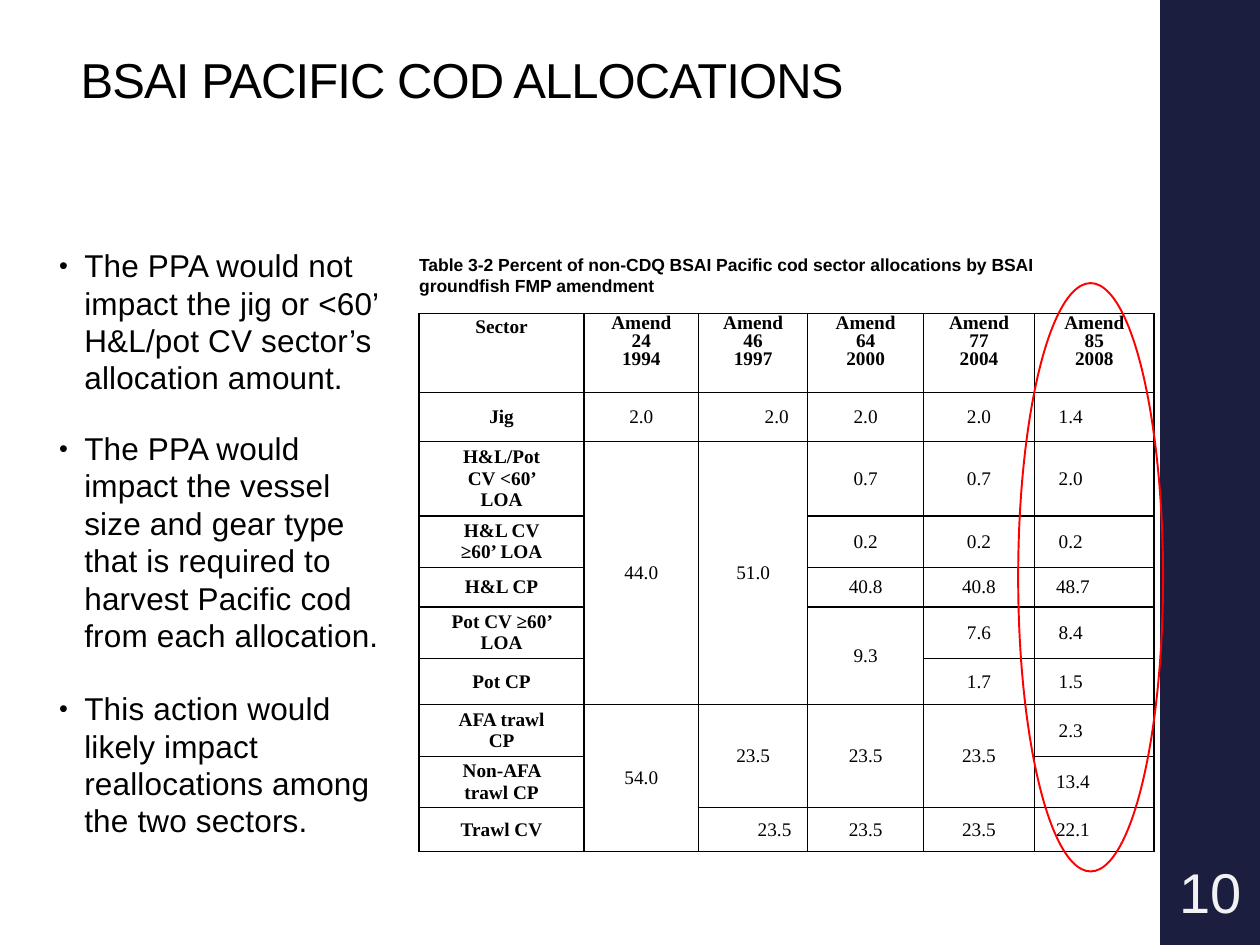
from lxml.etree import SubElement
from pptx import Presentation
from pptx.dml.color import RGBColor
from pptx.enum.shapes import MSO_SHAPE
from pptx.enum.text import MSO_ANCHOR, MSO_AUTO_SIZE, PP_ALIGN
from pptx.oxml import parse_xml
from pptx.oxml.ns import nsdecls, qn
from pptx.util import Pt

NAVY = RGBColor(0x1B, 0x1E, 0x3E)
BLACK = RGBColor(0, 0, 0)
RED = RGBColor(0xFF, 0, 0)
PALE = RGBColor(0xF2, 0xF2, 0xF2)


def apply(target, formats):
    for attribute, value in formats.items():
        setattr(target, attribute, value)


def write(paragraph, text, size, color=BLACK, bold=False, font="Arial", spacing=0):
    run = paragraph.add_run()
    run.text = text
    apply(run.font, {"size": Pt(size), "name": font, "bold": bold})
    run.font.color.rgb = color
    if spacing:
        run.font._element.set("spc", str(spacing))


prs = Presentation()
prs.slide_width, prs.slide_height = Pt(720), Pt(540)
slide = prs.slides.add_slide(prs.slide_layouts[1])
title, points = slide.placeholders

# Title
apply(title, {"left": Pt(38.9), "top": Pt(10.8), "width": Pt(643), "height": Pt(55.4)})
apply(title.text_frame, {"vertical_anchor": MSO_ANCHOR.BOTTOM,
                         "auto_size": MSO_AUTO_SIZE.NONE})
heading = title.text_frame.paragraphs[0]
apply(heading, {"alignment": PP_ALIGN.LEFT, "line_spacing": 0.9})
write(heading, "BSAI PACIFIC COD ALLOCATIONS", 28, spacing=-50)

# Bulleted points: text and space before
apply(points, {"left": Pt(26.6), "top": Pt(119.5), "width": Pt(206), "height": Pt(415.4)})
apply(points.text_frame, {"margin_top": Pt(22), "auto_size": MSO_AUTO_SIZE.NONE})
POINTS = [
    ("The PPA would not impact the jig or <60’ H&L/pot CV sector’s allocation amount.", 0),
    ("The PPA would impact the vessel size and gear type that is required to harvest "
     "Pacific cod from each allocation.", 19),
    ("This action would likely impact reallocations among the two sectors.", 20.5),
]
for number, (text, gap) in enumerate(POINTS):
    frame = points.text_frame
    point = frame.add_paragraph() if number else frame.paragraphs[0]
    apply(point, {"line_spacing": 0.99, "space_before": Pt(gap), "space_after": Pt(0)})
    properties = point._p.get_or_add_pPr()
    properties.set("marL", str(Pt(14.4)))
    properties.set("indent", str(Pt(-14.4)))
    bullet_color = SubElement(properties, qn("a:buClr"))
    SubElement(bullet_color, qn("a:srgbClr"), val=str(BLACK))
    SubElement(properties, qn("a:buSzPct"), val="80000")
    SubElement(properties, qn("a:buChar"), char="•")
    write(point, text, 18, spacing=10)

# Sidebar with page number
sidebar = slide.shapes.add_shape(MSO_SHAPE.RECTANGLE, Pt(663), 0, Pt(57), Pt(540))
sidebar.shadow.inherit = False
sidebar.fill.solid()
sidebar.fill.fore_color.rgb = NAVY
sidebar.line.fill.background()
page_number = slide.shapes.add_textbox(Pt(664.6), Pt(486), Pt(54), Pt(46.8))
apply(page_number.text_frame, {"vertical_anchor": MSO_ANCHOR.MIDDLE, "word_wrap": True,
                               "margin_left": Pt(2), "margin_right": Pt(2)})
page_number.text_frame.paragraphs[0].alignment = PP_ALIGN.CENTER
write(page_number.text_frame.paragraphs[0], "10", 32, PALE)

# Table caption
caption = slide.shapes.add_textbox(Pt(232.4), Pt(141.8), Pt(398), Pt(31.7))
caption.text_frame.word_wrap = True
write(caption.text_frame.paragraphs[0],
      "Table 3-2 Percent of non-CDQ BSAI Pacific cod sector allocations "
      "by BSAI groundfish FMP amendment", 10, bold=True)

# Allocation table; None continues the cell above
ALLOCATIONS = [
    ["Sector", "Amend 24\n1994", "Amend 46\n1997", "Amend 64\n2000", "Amend 77\n2004",
     "Amend 85\n2008"],
    ["Jig", "2.0", "2.0", "2.0", "2.0", "1.4"],
    ["H&L/Pot CV <60’ LOA", "44.0", "51.0", "0.7", "0.7", "2.0"],
    ["H&L CV ≥60’ LOA", None, None, "0.2", "0.2", "0.2"],
    ["H&L CP", None, None, "40.8", "40.8", "48.7"],
    ["Pot CV ≥60’ LOA", None, None, "9.3", "7.6", "8.4"],
    ["Pot CP", None, None, None, "1.7", "1.5"],
    ["AFA trawl CP", "54.0", "23.5", "23.5", "23.5", "2.3"],
    ["Non-AFA trawl CP", None, None, None, None, "13.4"],
    ["Trawl CV", None, "23.5", "23.5", "23.5", "22.1"],
]
COLUMN_WIDTHS = [94.3, 65.4, 62.4, 66.2, 63.4, 68.4]
ROW_HEIGHTS = [45, 28, 42.5, 29.5, 22.5, 29.5, 26.5, 29.5, 29, 25]
allocations = slide.shapes.add_table(
    len(ROW_HEIGHTS), len(COLUMN_WIDTHS), Pt(239.5), Pt(179.2),
    Pt(sum(COLUMN_WIDTHS)), Pt(sum(ROW_HEIGHTS))).table
apply(allocations, {"first_row": False, "horz_banding": False})
for column, width in zip(allocations.columns, COLUMN_WIDTHS):
    column.width = Pt(width)
for row, height in zip(allocations.rows, ROW_HEIGHTS):
    row.height = Pt(height)

for r, values in enumerate(ALLOCATIONS):
    for c, value in enumerate(values):
        cell = allocations.cell(r, c)
        apply(cell, {"margin_left": Pt(3), "margin_right": Pt(3),
                     "margin_top": Pt(1.5), "margin_bottom": Pt(1.5),
                     "vertical_anchor": MSO_ANCHOR.MIDDLE if r else MSO_ANCHOR.TOP})
        for position, side in enumerate(("lnL", "lnR", "lnT", "lnB")):
            cell._tc.get_or_add_tcPr().insert(position, parse_xml(
                f'<a:{side} {nsdecls("a")} w="{Pt(1)}"><a:solidFill>'
                f'<a:srgbClr val="{BLACK}"/></a:solidFill></a:{side}>'))
        cell.fill.background()
        if value is None:
            continue

        # Left and right indents place the centred text in its column
        indents = (15, 15) if c == 0 else (11, 11)
        shift = 27 if len(value) == 3 else 24.5
        if r and c == 5:
            indents = (0, shift)
        elif c == 2 and r in (1, 9):
            indents = (shift, 0)
        for number, line in enumerate(value.split("\n")):
            frame = cell.text_frame
            entry = frame.add_paragraph() if number else frame.paragraphs[0]
            entry.alignment = PP_ALIGN.CENTER
            if r == 0 and c:
                entry.line_spacing = Pt(10.3)
            for side, indent in zip(("marL", "marR"), indents):
                entry._p.get_or_add_pPr().set(side, str(Pt(indent)))
            write(entry, line, 11, bold=r == 0 or c == 0, font="Times New Roman")

        # Join with the continued cells below
        last = r
        while last + 1 < len(ALLOCATIONS) and ALLOCATIONS[last + 1][c] is None:
            last += 1
        if last > r:
            cell.merge(allocations.cell(last, c))

# Ring around the latest amendment
ring = slide.shapes.add_shape(MSO_SHAPE.OVAL, Pt(581.8), Pt(161.8), Pt(82.8), Pt(336.2))
ring.shadow.inherit = False
ring.fill.background()
ring.line.color.rgb = RED
ring.line.width = Pt(1.1)

prs.save("out.pptx")
